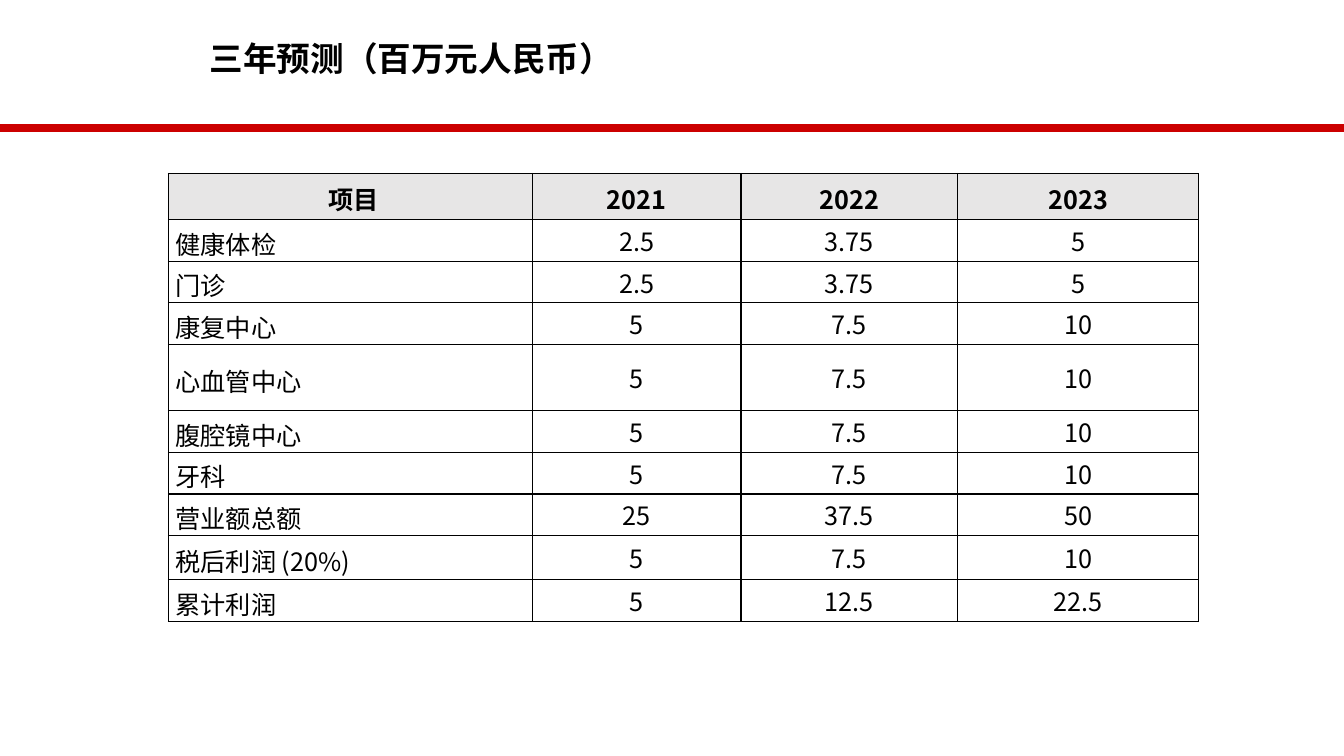
from dataclasses import dataclass

from lxml.etree import SubElement
from pptx import Presentation
from pptx.dml.color import RGBColor
from pptx.enum.shapes import MSO_CONNECTOR
from pptx.enum.text import MSO_ANCHOR, PP_ALIGN
from pptx.oxml import parse_xml
from pptx.oxml.ns import nsdecls, qn
from pptx.util import Inches, Pt


@dataclass(frozen=True)
class Theme:
    font: str = "Noto Sans CJK SC"
    ink: str = "000000"
    rule: str = "CC0000"
    header: str = "E7E6E6"
    title_size: float = 24
    table_size: float = 18
    rule_width: float = 5.64
    border_width: float = 1


HEADINGS = ("项目", "2021", "2022", "2023")
FORECAST = (
    ("健康体检", "2.5", "3.75", "5"),
    ("门诊", "2.5", "3.75", "5"),
    ("康复中心", "5", "7.5", "10"),
    ("心血管中心", "5", "7.5", "10"),
    ("腹腔镜中心", "5", "7.5", "10"),
    ("牙科", "5", "7.5", "10"),
    ("营业额总额", "25", "37.5", "50"),
    ("税后利润 (20%)", "5", "7.5", "10"),
    ("累计利润", "5", "12.5", "22.5"),
)
COLUMN_WIDTHS = (3.61, 2.07, 2.15, 2.39)
ROW_HEIGHT, LABEL_INSET, SIDE_INSET = 0.41, 0.05, 0.07
SPECIAL_ROWS = {0: (0.46, 0.07), 4: (0.66, 0.18), 8: (0.44, 0.07)}


class SlideBuilder:
    """Draw styled elements on the current slide."""

    def __init__(self, page, theme):
        self.page = page
        self.theme = theme

    def apply(self, target, values):
        for name, value in values.items():
            setattr(target, name, value)

    def add_text(self, frame, text, size, bold=False, align=PP_ALIGN.LEFT):
        para = frame.paragraphs[0]
        para.alignment = align
        span = para.add_run()
        span.text = text
        self.apply(span.font, {"size": Pt(size), "bold": bold, "name": self.theme.font})
        span.font.color.rgb = RGBColor.from_string(self.theme.ink)
        east_asian = SubElement(span.font._element, qn("a:ea"))
        east_asian.set("typeface", self.theme.font)

    def rule(self, top, width):
        line = self.page.shapes.add_connector(
            MSO_CONNECTOR.STRAIGHT, 0, Inches(top), Inches(width), Inches(top)
        )
        line.line.color.rgb = RGBColor.from_string(self.theme.rule)
        line.line.width = Pt(self.theme.rule_width)
        SubElement(line._element.spPr, qn("a:effectLst"))

    def title(self, text, left, top, width, height):
        box = self.page.shapes.add_textbox(*map(Inches, (left, top, width, height)))
        self.apply(box.text_frame, {
            "word_wrap": True,
            "vertical_anchor": MSO_ANCHOR.BOTTOM,
            "margin_left": Inches(0.01),
            "margin_top": Inches(0.01),
            "margin_right": 0,
            "margin_bottom": 0,
        })
        self.add_text(box.text_frame, text, self.theme.title_size, bold=True)

    def border(self, cell):
        properties = cell._tc.get_or_add_tcPr()
        for side in ("lnL", "lnR", "lnT", "lnB"):
            properties.append(parse_xml(
                f'<a:{side} {nsdecls("a")} w="{Pt(self.theme.border_width)}"><a:solidFill>'
                f'<a:srgbClr val="{self.theme.ink}"/></a:solidFill></a:{side}>'
            ))

    def cell(self, cell, text, is_header, is_label, inset):
        top_aligned = is_header or is_label
        side = Inches(SIDE_INSET)
        self.apply(cell, {
            "margin_left": side if is_label or not is_header else 0,
            "margin_right": 0 if top_aligned else side,
            "margin_top": Inches(inset) if top_aligned else 0,
            "margin_bottom": 0,
            "vertical_anchor": MSO_ANCHOR.TOP if top_aligned else MSO_ANCHOR.MIDDLE,
        })
        self.border(cell)
        if is_header:
            cell.fill.solid()
            cell.fill.fore_color.rgb = RGBColor.from_string(self.theme.header)
        else:
            cell.fill.background()
        align = PP_ALIGN.LEFT if is_label and not is_header else PP_ALIGN.CENTER
        self.add_text(cell.text_frame, text, self.theme.table_size, is_header, align)

    def table(self, rows, left, top):
        layout = [SPECIAL_ROWS.get(i, (ROW_HEIGHT, LABEL_INSET)) for i in range(len(rows))]
        width, height = sum(COLUMN_WIDTHS), sum(size for size, _ in layout)
        table = self.page.shapes.add_table(
            len(rows), len(COLUMN_WIDTHS), *map(Inches, (left, top, width, height))
        ).table
        self.apply(table, {"first_row": False, "horz_banding": False})
        for column, column_width in zip(table.columns, COLUMN_WIDTHS):
            column.width = Inches(column_width)
        for r, (values, (row_height, inset)) in enumerate(zip(rows, layout)):
            table.rows[r].height = Inches(row_height)
            for c, text in enumerate(values):
                self.cell(table.cell(r, c), text, r == 0, c == 0, inset)


def main():
    deck = Presentation()
    deck.slide_width, deck.slide_height = Inches(13.33), Inches(7.5)
    page = deck.slides.add_slide(deck.slide_layouts[6])
    builder = SlideBuilder(page, Theme())
    builder.rule(1.27, 13.33)
    builder.table((HEADINGS, *FORECAST), 1.67, 1.72)
    builder.title("三年预测（百万元人民币）", 2.07, 0.36, 4.1, 0.42)
    deck.save("out.pptx")


if __name__ == "__main__":
    main()
